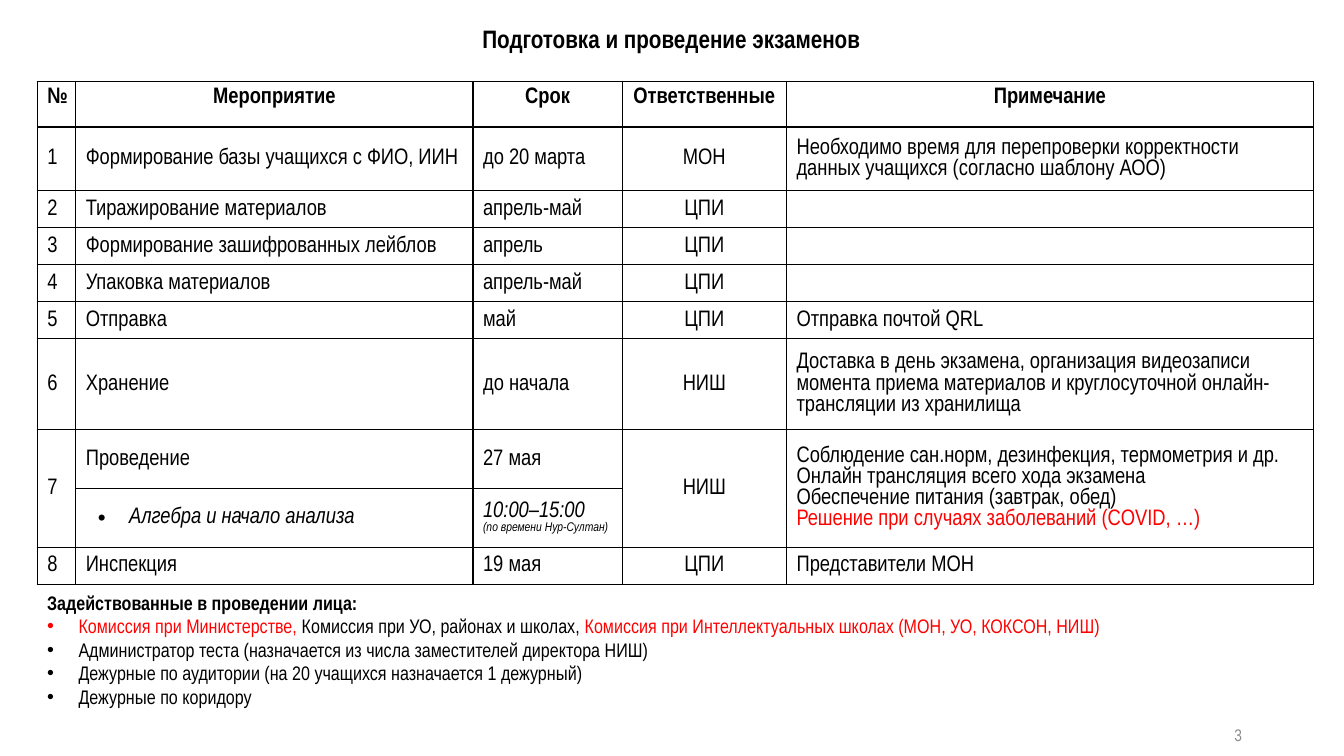
from dataclasses import dataclass
from lxml import etree
from pptx import Presentation, util as u
from pptx.dml import color
from pptx.enum import text
from pptx.oxml import ns

Cm, Pt = u.Cm, u.Pt
LEFT, CENTER, RIGHT = text.PP_ALIGN.LEFT, text.PP_ALIGN.CENTER, text.PP_ALIGN.RIGHT
MIDDLE, TOP = text.MSO_ANCHOR.MIDDLE, text.MSO_ANCHOR.TOP


@dataclass
class Theme:
    font: str = "Arial Narrow"
    black: str = "000000"
    red: str = "FF0000"
    grey: str = "8C8C8C"
    title: int = 18
    table: int = 16
    people: int = 14
    number: int = 12
    small: int = 9


theme = Theme()
COLOURS = {"r": theme.red, "g": theme.grey}


def write(tf, paragraphs, size, align=LEFT, indent=0.79):
    for i, runs in enumerate(paragraphs):
        p = tf.add_paragraph() if i else tf.paragraphs[0]
        p.alignment = align
        if "•" in runs[0][1]:
            pPr = p._p.get_or_add_pPr()
            pPr.set("marL", str(Cm(indent)))
            pPr.set("indent", str(-Cm(0.79)))
            etree.SubElement(pPr, ns.qn("a:buFont"), typeface="Arial")
            etree.SubElement(pPr, ns.qn("a:buChar"), char="•")
        for words, flags in runs:
            r = p.add_run()
            r.text = words
            r.font.name = theme.font
            r.font.size = Pt(theme.small if "s" in flags else size)
            r.font.bold = "b" in flags
            r.font.italic = "i" in flags
            colour = next((COLOURS[f] for f in flags if f in COLOURS), theme.black)
            r.font.color.rgb = color.RGBColor.from_string(colour)


def add_text(s, box, paragraphs, size, align=LEFT, anchor=TOP, wrap=True):
    tf = s.shapes.add_textbox(*[Cm(v) for v in box]).text_frame
    tf.word_wrap = wrap
    tf.vertical_anchor = anchor
    write(tf, paragraphs, size, align)


prs = Presentation()
prs.slide_width, prs.slide_height = Cm(33.87), Cm(19.05)
s = prs.slides.add_slide(prs.slide_layouts[6])

add_text(s, (8.46, 0.46, 16.92, 1.02), [[("Подготовка и проведение экзаменов", "b")]],
         theme.title, CENTER)

exam_notes = [
    [("Соблюдение сан.норм, дезинфекция, термометрия и др.", "")],
    [("Онлайн трансляция всего хода экзамена", "")],
    [("Обеспечение питания (завтрак, обед)", "")],
    [("Решение при случаях заболеваний (COVID, …)", "r")],
]
exam_time = [[("10:00–15:00", "i")], [("(по времени Нур-Султан)", "is")]]
rows = [
    (1.14, "№", "Мероприятие", "Срок", "Ответственные", "Примечание"),
    (1.61, "1", "Формирование базы учащихся с ФИО, ИИН", "до 20 марта", "МОН",
     "Необходимо время для перепроверки корректности данных учащихся (согласно шаблону АОО)"),
    (0.93, "2", "Тиражирование материалов", "апрель-май", "ЦПИ", ""),
    (0.93, "3", "Формирование зашифрованных лейблов", "апрель", "ЦПИ", ""),
    (0.93, "4", "Упаковка материалов", "апрель-май", "ЦПИ", ""),
    (0.93, "5", "Отправка", "май", "ЦПИ", "Отправка почтой QRL"),
    (2.29, "6", "Хранение", "до начала", "НИШ",
     "Доставка в день экзамена, организация видеозаписи момента приема материалов "
     "и круглосуточной онлайн-трансляции из хранилища"),
    (1.49, "7", "Проведение", "27 мая", "НИШ", exam_notes),
    (1.47, "", [[("Алгебра и начало анализа", "i•")]], exam_time, "", ""),
    (0.93, "8", "Инспекция", "19 мая", "ЦПИ", "Представители МОН"),
]
widths = [0.97, 10.01, 3.76, 4.14, 13.28]

tbl = s.shapes.add_table(len(rows), len(widths), Cm(0.94), Cm(2.06),
                         Cm(sum(widths)), Cm(sum(row[0] for row in rows))).table
tbl.first_row = tbl.horz_banding = False
for column, width in zip(tbl.columns, widths):
    column.width = Cm(width)

for i, (height, *values) in enumerate(rows):
    tbl.rows[i].height = Cm(height)
    for j, value in enumerate(values):
        cell = tbl.cell(i, j)
        tcPr = cell._tc.get_or_add_tcPr()
        for side in ("lnL", "lnR", "lnT", "lnB"):
            ln = etree.SubElement(tcPr, ns.qn(f"a:{side}"), w=str(Pt(1)))
            line_fill = etree.SubElement(ln, ns.qn("a:solidFill"))
            etree.SubElement(line_fill, ns.qn("a:srgbClr"), val=theme.black)
        cell.fill.background()
        cell.vertical_anchor = MIDDLE if i else TOP
        if not value:
            etree.SubElement(cell.text_frame.paragraphs[0]._p, ns.qn("a:endParaRPr"),
                             sz=str(theme.table * 100))
            continue
        if isinstance(value, str):
            value = [[(value, "" if i else "b")]]
        write(cell.text_frame, value, theme.table, CENTER if i == 0 or j == 3 else LEFT, 1.09)

for j in (0, 3, 4):
    tbl.cell(7, j).merge(tbl.cell(8, j))

people = [
    [("Задействованные в проведении лица:", "b")],
    [("Комиссия при Министерстве, ", "r•"),
     ("Комиссия при УО, районах и школах, ", ""),
     ("Комиссия при Интеллектуальных школах (МОН, УО, КОКСОН, НИШ)", "r")],
    [("Администратор теста (назначается из числа заместителей директора НИШ)", "•")],
    [("Дежурные по аудитории (на 20 учащихся назначается 1 дежурный)", "•")],
    [("Дежурные по коридору", "•")],
]
add_text(s, (0.94, 14.76, 27.36, 3.25), people, theme.people, wrap=False)
add_text(s, (23.93, 18.01, 7.62, 1.02), [[("3", "g")]], theme.number, RIGHT, MIDDLE)

prs.save("out.pptx")
